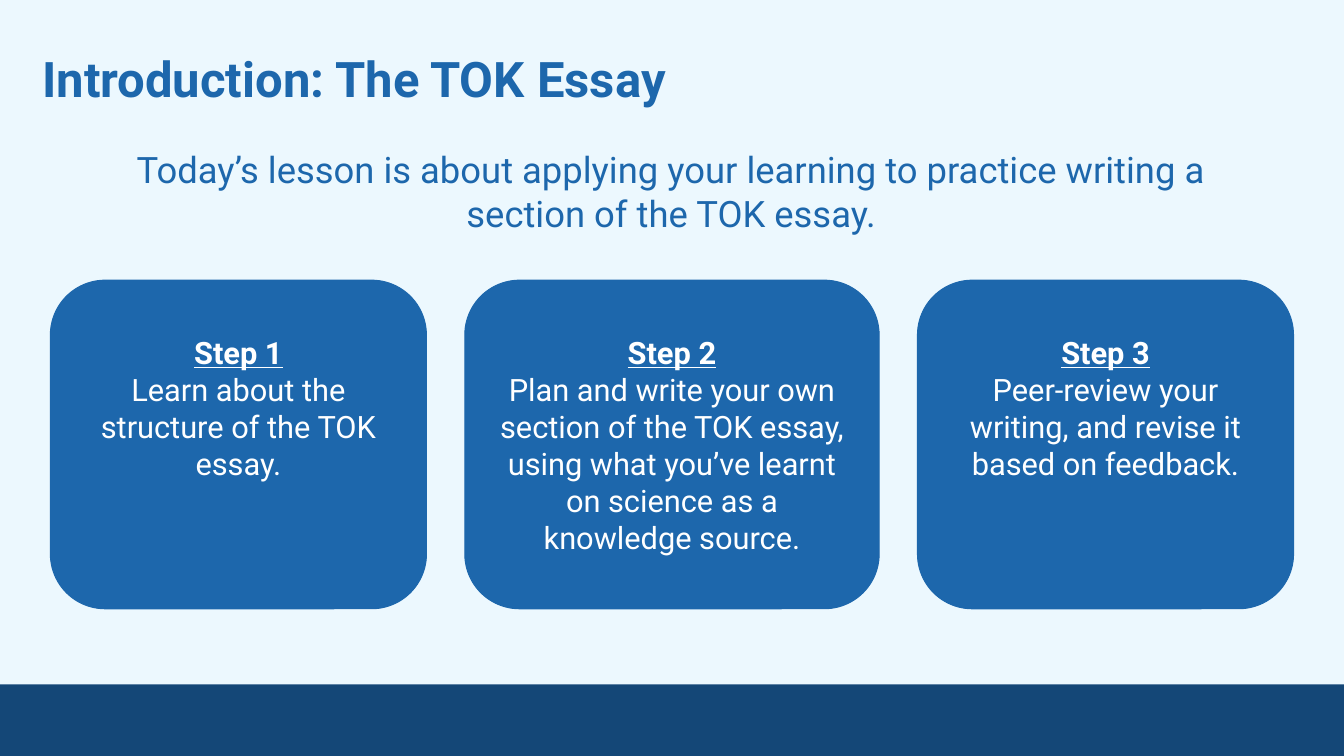
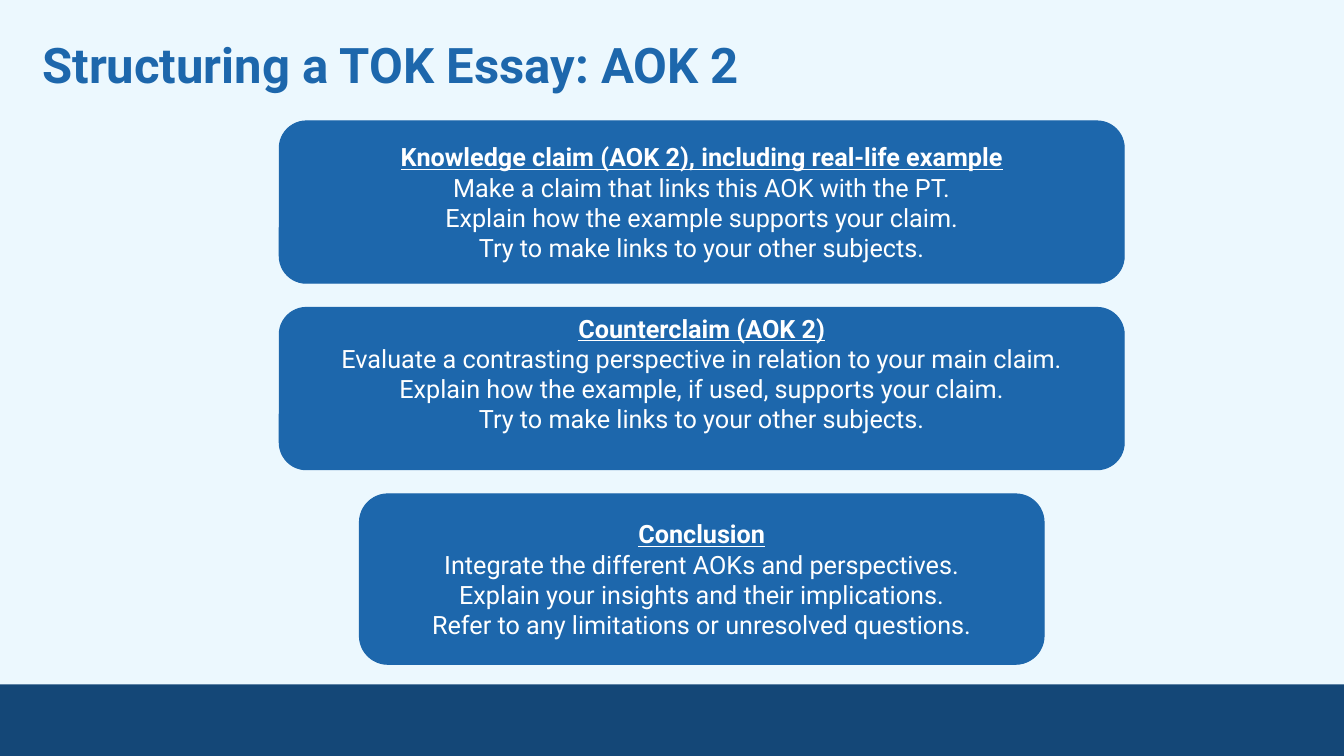
from pptx import Presentation
from pptx.dml.color import RGBColor
from pptx.enum.shapes import MSO_SHAPE
from pptx.enum.text import MSO_ANCHOR, MSO_AUTO_SIZE, PP_ALIGN
from pptx.util import Inches, Pt

CENTER = PP_ALIGN.CENTER
TOP, MIDDLE = MSO_ANCHOR.TOP, MSO_ANCHOR.MIDDLE
FONT = "Roboto"
COLORS = {
    name: RGBColor.from_string(value)
    for name, value in {
        "background": "ECF8FE",
        "blue": "1D67AC",
        "navy": "144777",
        "white": "FFFFFF",
    }.items()
}


def write_text(shape, lines, size, color, anchor=TOP, margins=(0.1, 0.1, 0.1, 0.1),
               align=CENTER, bold_first=False, underline_first=False):
    """Fill a shape with paragraphs; margins are left, top, right, bottom."""
    frame = shape.text_frame
    frame.word_wrap = True
    frame.auto_size = MSO_AUTO_SIZE.NONE
    frame.vertical_anchor = anchor
    frame.margin_left, frame.margin_top, frame.margin_right, frame.margin_bottom = map(Inches, margins)
    frame.text = "\n".join(lines)
    for index, para in enumerate(frame.paragraphs):
        para.alignment = align
        para.font.name = FONT
        para.font.size = Pt(size)
        para.font.color.rgb = COLORS[color]
        para.font.bold = bold_first and index == 0
        para.font.underline = underline_first and index == 0


def add_card(page, left, top, width, height, lines, size, anchor, margins):
    """Add a blue rounded card with an underlined heading."""
    card = page.shapes.add_shape(
        MSO_SHAPE.ROUNDED_RECTANGLE, Inches(left), Inches(top), Inches(width), Inches(height))
    card.shadow.inherit = False
    card.fill.solid()
    card.fill.fore_color.rgb = COLORS["blue"]
    card.line.color.rgb = COLORS["blue"]
    card.line.width = Pt(0.75)
    write_text(card, lines, size, "white", anchor, margins, bold_first=True, underline_first=True)


deck = Presentation()
deck.slide_width = Inches(13.33)
deck.slide_height = Inches(7.5)
layout = deck.slide_layouts.get_by_name("Title Only")

# Shared background
background = deck.slide_master.background.fill
background.solid()
background.fore_color.rgb = COLORS["background"]

# Pages with their titles
pages = []
for title_text, title_top in [
    ("Introduction: The TOK Essay", 0.35),
    ("Structuring a TOK Essay: AOK 2", 0.21),
]:
    page = deck.slides.add_slide(layout)
    title = page.shapes.title
    title.left, title.top = Inches(0.29), Inches(title_top)
    title.width, title.height = Inches(12.19), Inches(0.86)
    write_text(title, [title_text], 35, "blue", margins=(0.13,) * 4,
               align=PP_ALIGN.LEFT, bold_first=True)
    pages.append(page)
intro_page, structure_page = pages

# Shared footer band, moved to the layout behind its placeholders
band = intro_page.shapes.add_shape(
    MSO_SHAPE.RECTANGLE, Inches(-0.02), Inches(6.79), Inches(13.37), Inches(0.71))
band.shadow.inherit = False
band.fill.solid()
band.fill.fore_color.rgb = COLORS["navy"]
band.line.fill.background()
layout.shapes.element.insert(2, band.element)

# Introduction: lesson aim
aim = intro_page.shapes.add_textbox(Inches(0.91), Inches(1.36), Inches(11.5), Inches(1.08))
write_text(
    aim,
    ["Today’s lesson is about applying your learning to practice writing a section of the TOK essay."],
    26, "blue")

# Introduction: three steps in a row
STEP_GAP = 0.38
step_left = 0.5
steps = [
    (3.73, "Learn about the structure of the TOK essay."),
    (4.11, "Plan and write your own section of the TOK essay, using what you’ve learnt "
           "on science as a knowledge source."),
    (3.73, "Peer-review your writing, and revise it based on feedback."),
]
for number, (width, task) in enumerate(steps, start=1):
    add_card(intro_page, step_left, 2.78, width, 3.26, [f"Step {number}", task],
             22, TOP, (0.1, 0.37, 0.1, 0.1))
    step_left += width + STEP_GAP

# Structure: essay sections stacked on one centre line
SECTION_GAP = 0.24
SECTION_CENTER = 6.96
section_top = 1.2
sections = [
    (8.38, 1.61, 0.1, 0.1, [
        "Knowledge claim (AOK 2), including real-life example",
        "Make a claim that links this AOK with the PT.",
        "Explain how the example supports your claim.",
        "Try to make links to your other subjects.",
    ]),
    (8.38, 1.61, 0, 0.3, [
        "Counterclaim (AOK 2)",
        "Evaluate a contrasting perspective in relation to your main claim.",
        "Explain how the example, if used, supports your claim.",
        "Try to make links to your other subjects.",
    ]),
    (6.79, 1.69, 0.1, 0.1, [
        "Conclusion",
        "Integrate the different AOKs and perspectives.",
        "Explain your insights and their implications.",
        "Refer to any limitations or unresolved questions.",
    ]),
]
for width, height, margin_top, margin_bottom, lines in sections:
    add_card(structure_page, SECTION_CENTER - width / 2, section_top, width, height, lines,
             18, MIDDLE, (0.1, margin_top, 0.1, margin_bottom))
    section_top += height + SECTION_GAP

deck.save("out.pptx")
